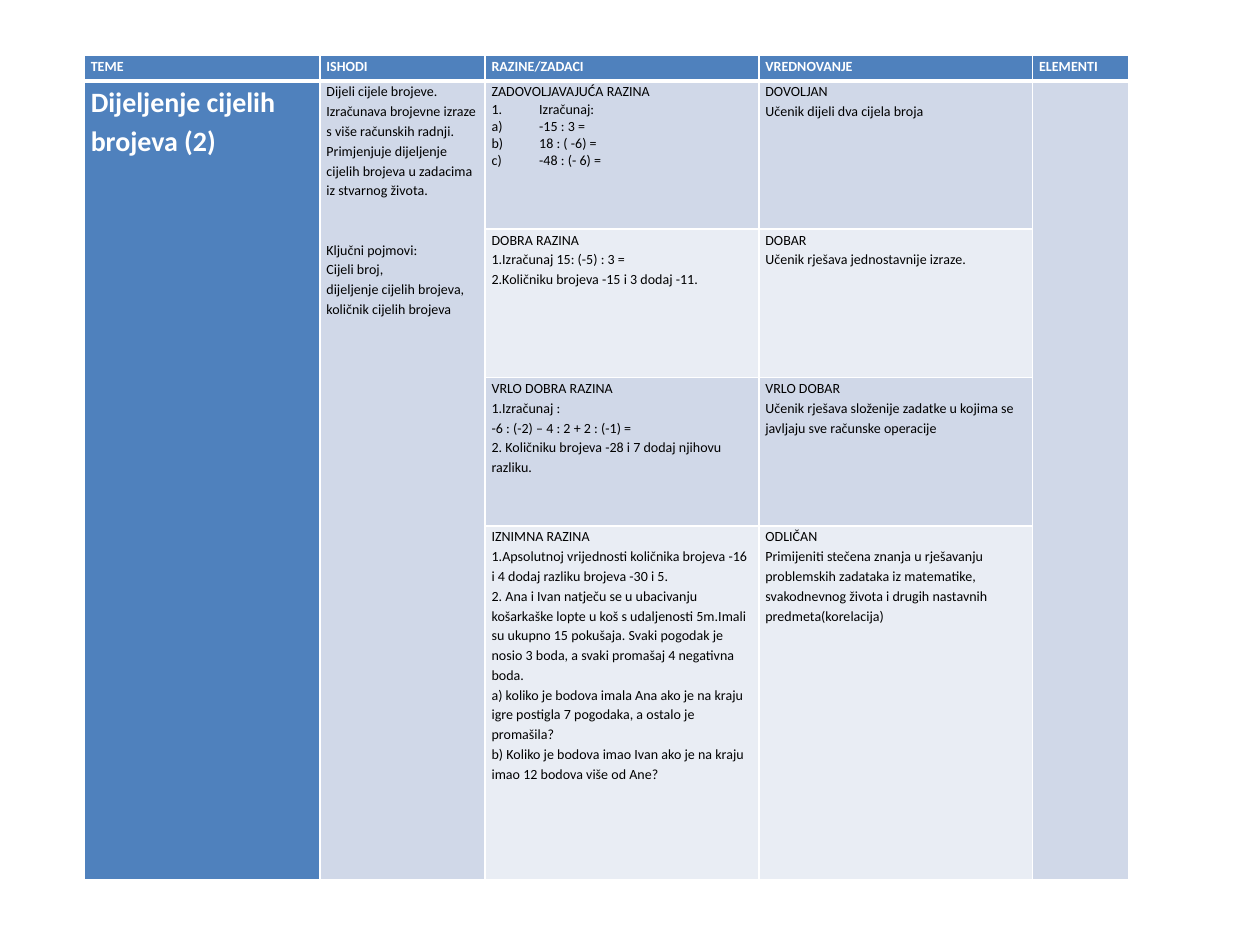
import pptx
import pptx.util
import pptx.dml.color
import pptx.enum.text
import pptx.oxml.ns
import lxml.etree

COLORS = {
    "header": "4F81BD",
    "band": "D0D8E8",
    "light": "E9EDF4",
    "white": "FFFFFF",
    "text": "000000",
}
NUMBER, LETTER = "arabicPeriod", "alphaLcParenR"
HEADINGS = ["TEME", "ISHODI", "RAZINE/ZADACI", "VREDNOVANJE", "ELEMENTI"]
TOPIC = "Dijeljenje cijelih brojeva (2)"
OUTCOMES = [
    "Dijeli cijele brojeve.",
    "Izračunava brojevne izraze s više računskih radnji.",
    "Primjenjuje dijeljenje cijelih brojeva u zadacima iz stvarnog života.",
]
KEY_TERMS = [
    "Ključni pojmovi:",
    "Cijeli broj,",
    "dijeljenje cijelih brojeva,",
    "količnik cijelih brojeva",
]
LEVELS = [
    (
        ["ZADOVOLJAVAJUĆA RAZINA"],
        ["DOVOLJAN", "Učenik dijeli dva cijela broja"],
    ),
    (
        ["DOBRA RAZINA", "1.Izračunaj 15: (-5) : 3 =", "2.Količniku brojeva -15 i 3 dodaj -11."],
        ["DOBAR", "Učenik rješava jednostavnije izraze."],
    ),
    (
        [
            "VRLO DOBRA RAZINA",
            "1.Izračunaj :",
            "-6 : (-2) – 4 : 2 + 2 : (-1) =",
            "2. Količniku brojeva -28 i 7 dodaj njihovu razliku.",
        ],
        [
            "VRLO DOBAR",
            "Učenik rješava složenije zadatke u kojima se javljaju sve računske operacije",
        ],
    ),
    (
        [
            "IZNIMNA RAZINA",
            "1.Apsolutnoj vrijednosti količnika brojeva -16 i 4 dodaj razliku brojeva -30 i 5.",
            "2. Ana i Ivan natječu se u ubacivanju košarkaške lopte u koš s udaljenosti 5m."
            "Imali su ukupno 15 pokušaja. Svaki pogodak je nosio 3 boda, "
            "a svaki promašaj 4 negativna boda.",
            "a) koliko je bodova imala Ana ako je na kraju igre postigla 7 pogodaka, "
            "a ostalo je promašila?",
            "b) Koliko je bodova imao Ivan ako je na kraju imao 12 bodova više od Ane?",
        ],
        [
            "ODLIČAN",
            "Primijeniti stečena znanja u rješavanju problemskih zadataka iz matematike, "
            "svakodnevnog života i drugih nastavnih predmeta(korelacija)",
        ],
    ),
]
EXERCISES = [
    (NUMBER, "Izračunaj:"),
    (LETTER, "-15 : 3 ="),
    (LETTER, "18 : ( -6) ="),
    (LETTER, "-48 : (- 6) ="),
]


class SlideBuilder:
    font = "Calibri"
    size = 8
    spacing = 1.15
    inset = pptx.util.Cm(0.13)
    indent = pptx.util.Cm(0.96)

    def __init__(self, slide):
        self.slide = slide

    def add_table(self, left, top, widths, heights):
        table = self.slide.shapes.add_table(
            len(heights), len(widths),
            pptx.util.Cm(left), pptx.util.Cm(top),
            pptx.util.Cm(sum(widths)), pptx.util.Cm(sum(heights)),
        ).table
        table.horz_banding = False
        for column, width in zip(table.columns, widths):
            column.width = pptx.util.Cm(width)
        for row, height in zip(table.rows, heights):
            row.height = pptx.util.Cm(height)
        return table

    def style_cell(self, cell, fill, top=1, bottom=1):
        cell.margin_left = cell.margin_right = self.inset
        cell.margin_top = cell.margin_bottom = 0
        properties = cell._tc.get_or_add_tcPr()
        for side, width in (("lnL", 1), ("lnR", 1), ("lnT", top), ("lnB", bottom)):
            line = lxml.etree.SubElement(
                properties, pptx.oxml.ns.qn("a:" + side), w=str(pptx.util.Pt(width))
            )
            solid = lxml.etree.SubElement(line, pptx.oxml.ns.qn("a:solidFill"))
            lxml.etree.SubElement(solid, pptx.oxml.ns.qn("a:srgbClr"), val=COLORS["white"])
        cell.fill.solid()
        cell.fill.fore_color.rgb = pptx.dml.color.RGBColor.from_string(COLORS[fill])

    def add_paragraph(self, cell, text, color="text", size=None, bold=False):
        frame = cell.text_frame
        paragraph = frame.paragraphs[0] if not frame.text else frame.add_paragraph()
        paragraph.alignment = pptx.enum.text.PP_ALIGN.LEFT
        run = paragraph.add_run()
        run.text = text
        run.font.name = self.font
        run.font.size = pptx.util.Pt(size or self.size)
        run.font.bold = bold
        run.font.color.rgb = pptx.dml.color.RGBColor.from_string(COLORS[color])
        return paragraph

    def add_lines(self, cell, lines, space_before=0, **style):
        for index, text in enumerate(lines):
            paragraph = self.add_paragraph(cell, text, **style)
            paragraph.line_spacing = self.spacing
            if index == 0 and space_before:
                paragraph.space_before = pptx.util.Pt(space_before)

    def add_numbered(self, cell, items):
        for numbering, text in items:
            properties = self.add_paragraph(cell, text)._p.get_or_add_pPr()
            properties.set("marL", str(self.indent))
            properties.set("indent", str(-self.indent))
            lxml.etree.SubElement(
                properties, pptx.oxml.ns.qn("a:buFont"), typeface="+mj-lt"
            )
            lxml.etree.SubElement(
                properties, pptx.oxml.ns.qn("a:buAutoNum"), type=numbering
            )


def main():
    presentation = pptx.Presentation()
    presentation.slide_width = pptx.util.Cm(25.4)
    presentation.slide_height = pptx.util.Cm(19.05)
    slide = presentation.slides.add_slide(presentation.slide_layouts[6])
    builder = SlideBuilder(slide)

    table = builder.add_table(
        1.7, 1.12, [4.75, 3.33, 5.52, 5.52, 1.93], [0.51, 2.99, 2.99, 2.99, 7.14]
    )
    for column, heading in enumerate(HEADINGS):
        cell = table.cell(0, column)
        builder.style_cell(cell, "header", bottom=3)
        builder.add_lines(cell, [heading], color="white", bold=True)

    for row, level in enumerate(LEVELS, start=1):
        level_fill = "band" if row % 2 else "light"
        fills = ["header", "band", level_fill, level_fill, "band"]
        for column, fill in enumerate(fills):
            builder.style_cell(table.cell(row, column), fill, top=3 if row == 1 else 1)
        for column, lines in enumerate(level, start=2):
            builder.add_lines(table.cell(row, column), lines)

    for column in (0, 1, 4):
        table.cell(1, column).merge(table.cell(len(LEVELS), column))
    builder.add_lines(table.cell(1, 0), [TOPIC], color="white", size=16, bold=True)
    builder.add_lines(table.cell(1, 1), OUTCOMES)
    builder.add_lines(table.cell(1, 1), KEY_TERMS, space_before=22.5)
    builder.add_numbered(table.cell(1, 2), EXERCISES)

    presentation.save("out.pptx")


if __name__ == "__main__":
    main()
